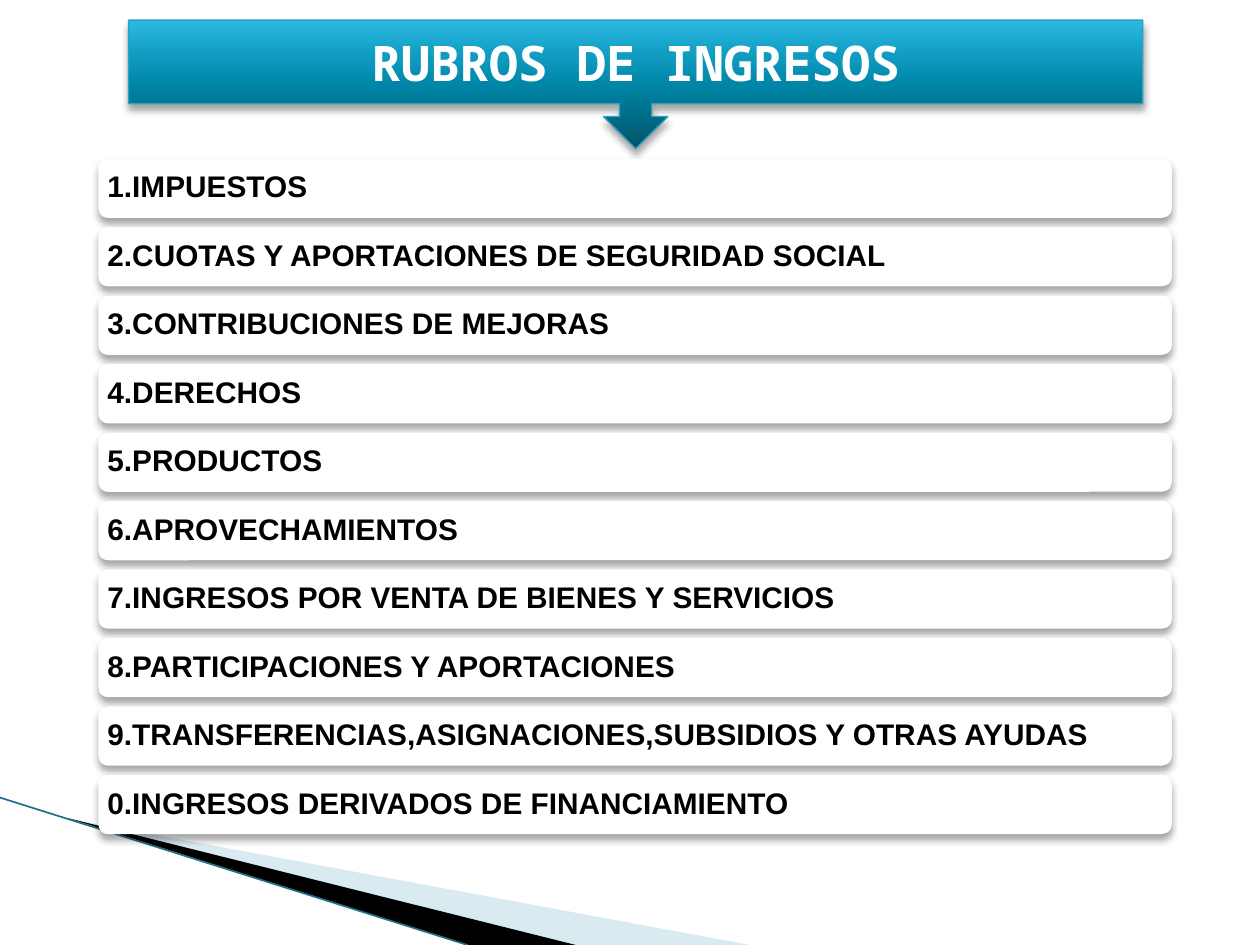
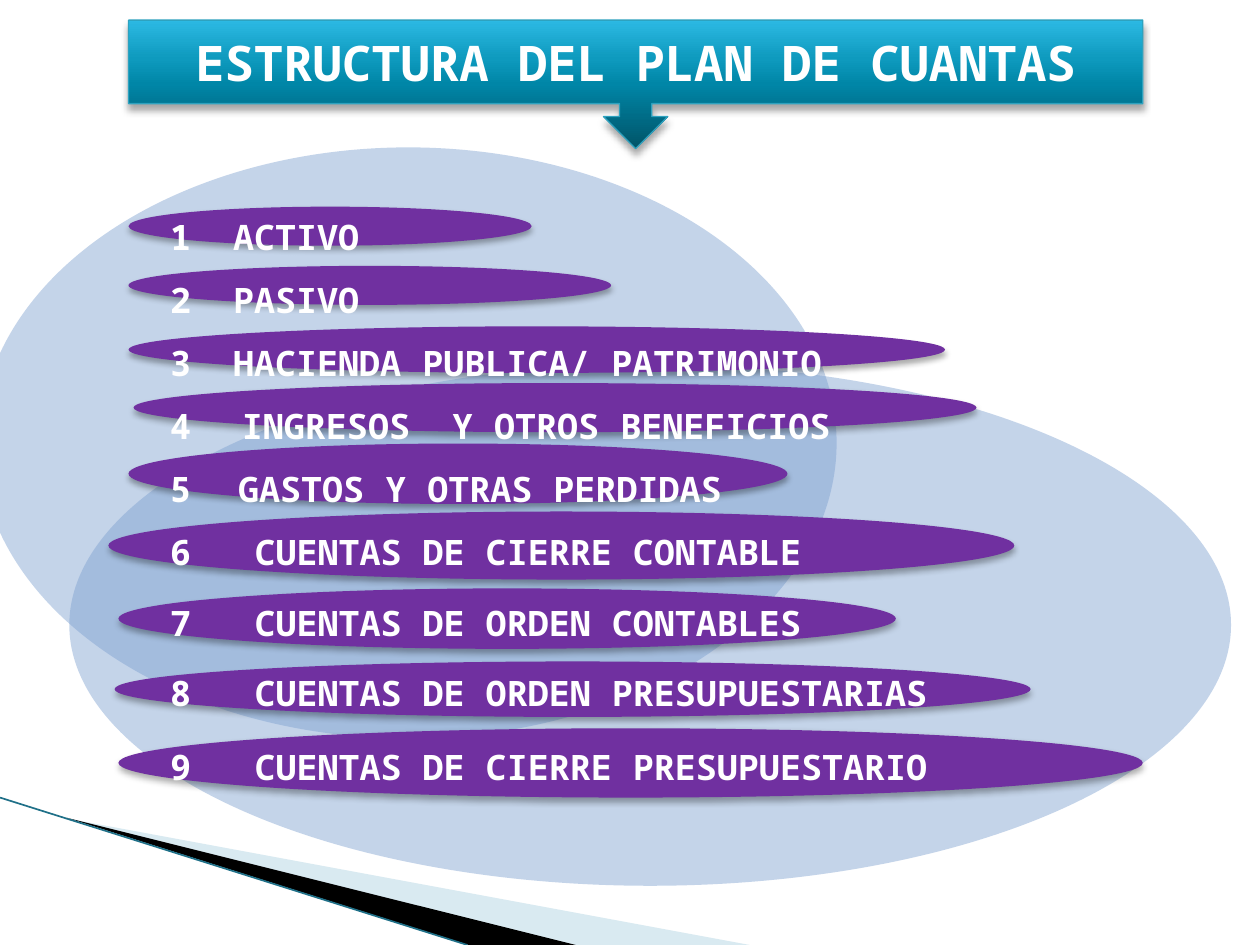
from lxml import etree
from pptx import Presentation
from pptx import util as u
from pptx.dml.color import RGBColor
from pptx.enum import shapes, text
from pptx.oxml.ns import qn

C = {
    "white": "FFFFFF", "black": "000000", "purple": "7030A0", "oval": "7DA0D0",
    "wedge": "A0CBDC", "edge": "1F7088", "border": "2DA2BF",
}
BANNER_STOPS = [(0, "005367"), (50, "0086A7"), (70, "0E9ABE"), (100, "2CB9E3")]
SANS, MONO = "Arial", "Noto Sans Mono"
KIND = shapes.MSO_SHAPE


def style(sp, fill, alpha=None, shadow=None):
    """Fill without outline; alpha in percent; shadow is (alpha, blur, distance)."""
    sp.fill.solid()
    sp.fill.fore_color.rgb = RGBColor.from_string(fill)
    sp.line.fill.background()
    sp.shadow.inherit = False
    if alpha:
        clr = sp.element.spPr.find(qn("a:solidFill"))[0]
        etree.SubElement(clr, qn("a:alpha"), val=str(alpha * 1000))
    if shadow:
        opacity, blur, dist = shadow
        effects = sp.element.spPr.find(qn("a:effectLst"))
        outer = etree.SubElement(effects, qn("a:outerShdw"), blurRad=str(u.Pt(blur)),
                                 dist=str(u.Pt(dist)), dir="5400000", rotWithShape="0")
        clr = etree.SubElement(outer, qn("a:srgbClr"), val=C["black"])
        etree.SubElement(clr, qn("a:alpha"), val=str(opacity * 1000))
    return sp


def write(p, words, size, font, color, align=text.PP_ALIGN.LEFT, spacing=1.0, before=0):
    p.alignment = align
    p.line_spacing = spacing
    p.space_before = u.Pt(before)
    r = p.add_run()
    r.text = words
    r.font.size, r.font.name, r.font.bold = u.Pt(size), font, True
    r.font.color.rgb = RGBColor.from_string(color)


prs = Presentation()
prs.slide_width, prs.slide_height = u.Inches(10), u.Inches(7.5)
rubros = prs.slides.add_slide(prs.slide_layouts[5])
plan = prs.slides.add_slide(prs.slide_layouts[1])

# Corner wedges, shared through the slide master
corner = []
for points, fill, alpha in [
    ([(0.55, 6.5), (5.95, 7.5), (4.56, 7.5)], C["wedge"], 40),
    ([(0.53, 6.49), (4.57, 7.5), (3.72, 7.5)], C["black"], None),
]:
    points = [(u.Inches(x), u.Inches(y)) for x, y in points]
    outline = rubros.shapes.build_freeform(*points[0])
    outline.add_line_segments(points[1:], close=True)
    corner.append(style(outline.convert_to_shape(), fill, alpha))
edge = rubros.shapes.add_connector(shapes.MSO_CONNECTOR.STRAIGHT, 0, u.Inches(6.33),
                                   u.Inches(3.71), u.Inches(7.5))
edge.line.color.rgb = RGBColor.from_string(C["edge"])
edge.line.width = u.Pt(0.95)
etree.SubElement(edge.element.spPr, qn("a:effectLst"))
corner.append(edge)
for i, sp in enumerate(corner):
    sp.element.xpath(".//p:cNvPr")[0].set("id", str(20 + i))
    prs.slide_master.shapes.element.append(sp.element)

# Title banners
for s, heading in [(rubros, "RUBROS DE INGRESOS"), (plan, "ESTRUCTURA DEL PLAN DE CUANTAS")]:
    left, top, width = u.Inches(1.02), u.Inches(0.16), u.Inches(8.05)
    banner = s.shapes.add_shape(KIND.DOWN_ARROW_CALLOUT, left, top, width, u.Inches(1.02))
    style(banner, C["border"], shadow=(35, 4, 3))
    banner.fill.gradient()
    banner.fill.gradient_angle = 90
    stops = banner.element.spPr.find(".//" + qn("a:gsLst"))
    stops[:] = []
    for pos, color in BANNER_STOPS:
        gs = etree.SubElement(stops, qn("a:gs"), pos=str(pos * 1000))
        etree.SubElement(gs, qn("a:srgbClr"), val=color)
    banner.line.color.rgb = RGBColor.from_string(C["border"])
    banner.line.width = u.Pt(0.75)

    title = s.shapes.title
    title.left, title.top, title.width, title.height = left, top, width, u.Inches(0.66)
    tf = title.text_frame
    tf.auto_size = text.MSO_AUTO_SIZE.NONE
    tf.vertical_anchor = text.MSO_ANCHOR.MIDDLE
    write(tf.paragraphs[0], heading, 28, MONO, C["white"], text.PP_ALIGN.CENTER)
    s.shapes.element.append(title.element)

# Slide 1: income headings
RUBROS = [
    "1.IMPUESTOS",
    "2.CUOTAS Y APORTACIONES DE SEGURIDAD SOCIAL",
    "3.CONTRIBUCIONES DE MEJORAS",
    "4.DERECHOS",
    "5.PRODUCTOS",
    "6.APROVECHAMIENTOS",
    "7.INGRESOS POR VENTA DE BIENES Y SERVICIOS",
    "8.PARTICIPACIONES Y APORTACIONES",
    "9.TRANSFERENCIAS,ASIGNACIONES,SUBSIDIOS Y OTRAS AYUDAS",
    "0.INGRESOS DERIVADOS DE FINANCIAMIENTO",
]
first_top, last_top = 1.26, 6.15
step = (last_top - first_top) / (len(RUBROS) - 1)
for i, rubro in enumerate(RUBROS):
    row = rubros.shapes.add_shape(KIND.ROUNDED_RECTANGLE, u.Inches(0.78),
                                  u.Inches(first_top + i * step), u.Inches(8.52), u.Inches(0.47))
    style(row, C["white"], shadow=(35, 4, 3))
    tf = row.text_frame
    tf.word_wrap = True
    tf.vertical_anchor = text.MSO_ANCHOR.MIDDLE
    tf.margin_left = tf.margin_right = tf.margin_top = tf.margin_bottom = u.Inches(0.05)
    write(tf.paragraphs[0], rubro, 17, SANS, C["black"], spacing=0.9)

# Slide 2: chart of accounts over two translucent ovals
for box in [(-0.16, 1.17, 6.8, 4.69), (0.55, 2.89, 9.22, 4.14)]:
    oval = plan.shapes.add_shape(KIND.OVAL, *map(u.Inches, box))
    style(oval, C["oval"], alpha=45)

# Account name, hanging indent (in), space before (pt), oval box (in)
CUENTAS = [
    ("ACTIVO", 0.5, 0, (1.02, 1.64, 3.2, 0.31)),
    ("PASIVO", 0.5, 0, (1.02, 2.11, 3.83, 0.31)),
    ("HACIENDA PUBLICA/ PATRIMONIO", 0.5, 0, (1.02, 2.59, 6.48, 0.37)),
    ("INGRESOS  Y OTROS BENEFICIOS", 0.57, 0, (1.06, 3.04, 6.69, 0.39)),
    ("GASTOS Y OTRAS PERDIDAS", 0.54, 0, (1.02, 3.52, 5.23, 0.48)),
    ("CUENTAS DE CIERRE CONTABLE", 0.67, 0, (0.86, 4.06, 7.19, 0.54)),
    ("CUENTAS DE ORDEN CONTABLES", 0.67, 5, (0.94, 4.67, 6.17, 0.48)),
    ("CUENTAS DE ORDEN PRESUPUESTARIAS", 0.67, 4, (0.91, 5.25, 7.27, 0.44)),
    ("CUENTAS DE CIERRE PRESUPUESTARIO", 0.67, 6, (0.94, 5.78, 8.13, 0.55)),
]
body = plan.placeholders[1]
body.left, body.top, body.width, body.height = map(u.Inches, (1.25, 1.49, 8.28, 4.85))
tf = body.text_frame
tf.auto_size = text.MSO_AUTO_SIZE.NONE
tf.vertical_anchor = text.MSO_ANCHOR.TOP
for i, (cuenta, indent, before, box) in enumerate(CUENTAS):
    style(plan.shapes.add_shape(KIND.OVAL, *map(u.Inches, box)), C["purple"], shadow=(32, 3.5, 2.2))
    p = tf.add_paragraph() if i else tf.paragraphs[0]
    pPr = p._p.get_or_add_pPr()
    pPr.set("marL", str(u.Inches(indent)))
    pPr.set("indent", str(-u.Inches(indent)))
    etree.SubElement(pPr, qn("a:buFont"), typeface=MONO)
    etree.SubElement(pPr, qn("a:buAutoNum"), type="arabicPlain")
    write(p, cuenta, 20, MONO, C["white"], spacing=u.Pt(36), before=before)
plan.shapes.element.append(body.element)

prs.save("out.pptx")
